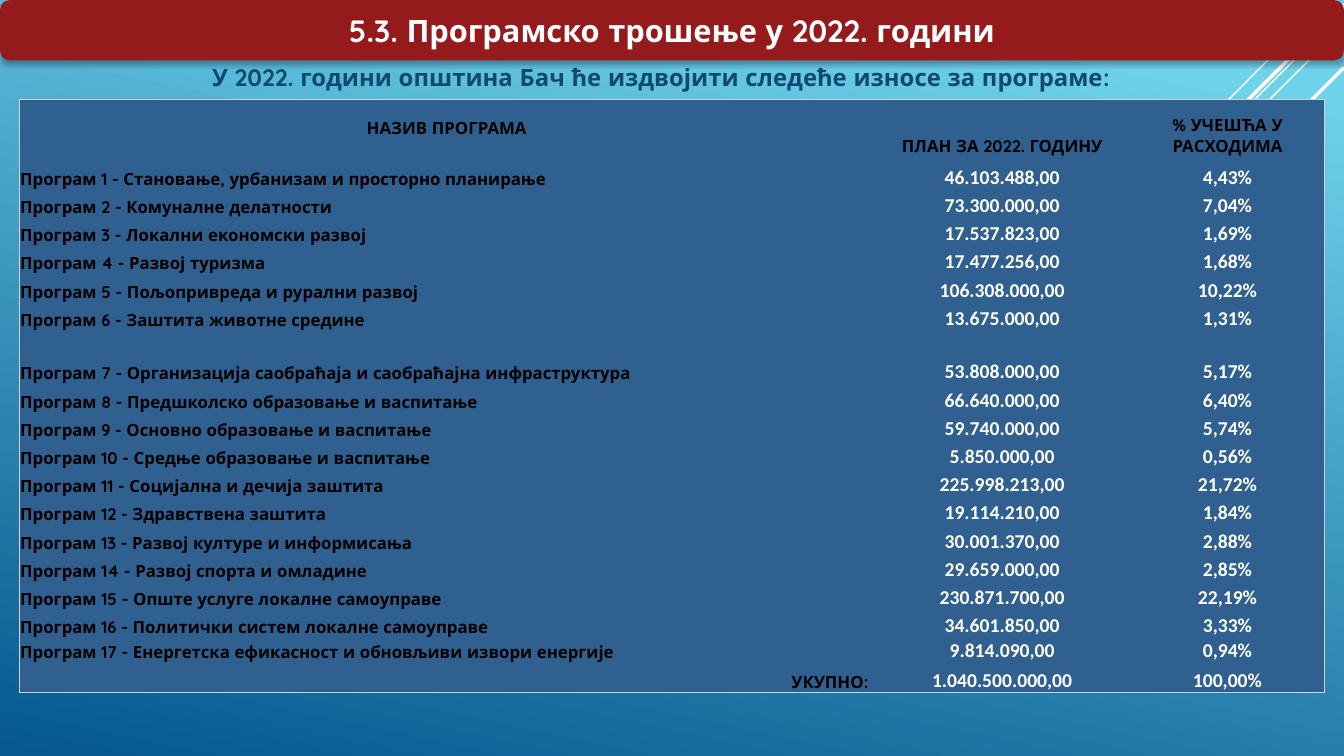
from lxml import etree
from pptx import Presentation
from pptx import util as u
from pptx.dml import color
from pptx.enum import shapes, text
from pptx.oxml import ns

TITLE = "5.3. Програмско трошење у 2022. години"
SUBTITLE = "У 2022. години општина Бач ће издвојити следеће износе за програме:"
HEADER = ("НАЗИВ ПРОГРАМА", "ПЛАН ЗА 2022. ГОДИНУ", "% УЧЕШЋА У РАСХОДИМА")
PROGRAMS = [
    ("Становање, урбанизам и просторно планирање", "46.103.488,00", "4,43%"),
    ("Комуналне делатности", "73.300.000,00", "7,04%"),
    ("Локални економски развој", "17.537.823,00", "1,69%"),
    ("Развој туризма", "17.477.256,00", "1,68%"),
    ("Пољопривреда и рурални развој", "106.308.000,00", "10,22%"),
    ("Заштита животне средине", "13.675.000,00", "1,31%"),
    ("Организација саобраћаја и саобраћајна инфраструктура", "53.808.000,00", "5,17%"),
    ("Предшколско образовање и васпитање", "66.640.000,00", "6,40%"),
    ("Основно образовање и васпитање", "59.740.000,00", "5,74%"),
    ("Средње образовање и васпитање", "5.850.000,00", "0,56%"),
    ("Социјална и дечија заштита", "225.998.213,00", "21,72%"),
    ("Здравствена заштита", "19.114.210,00", "1,84%"),
    ("Развој културе и информисања", "30.001.370,00", "2,88%"),
    ("Развој спорта и омладине", "29.659.000,00", "2,85%"),
    ("Опште услуге локалне самоуправе", "230.871.700,00", "22,19%"),
    ("Политички систем локалне самоуправе", "34.601.850,00", "3,33%"),
    ("Енергетска ефикасност и обновљиви извори енергије", "9.814.090,00", "0,94%"),
]
TOTAL = ("УКУПНО: ", "1.040.500.000,00", "100,00%")
COLUMNS = (8.48, 2.54, 1.93)
ROW_HEIGHT = 0.28
SPECIAL_HEIGHTS = {0: 0.56, 1: 0.33, 7: 0.53, 17: 0.25, 18: 0.29}
RAYS = [
    (13.16, 0.01, 9, 4.18, 1),
    (13.33, 0.1, 6.68, 6.75, 1),
    (13.33, 0.25, 7.91, 5.67, 1),
    (13.33, 0.04, 8.02, 5.34, 2.5),
    (13.33, 0.67, 8.58, 5.42, 2.5),
]


def rgb(value):
    return color.RGBColor.from_string(value)


def add_xml(parent, tag, **attrs):
    return etree.SubElement(parent, ns.qn(tag), {k: str(v) for k, v in attrs.items()})


class Deck:
    heading = {"name": "Quicksand", "size": u.Pt(22), "bold": True}
    subheading = {"name": "Quicksand", "size": u.Pt(17), "bold": True}
    label = {"name": "Quicksand", "size": u.Pt(12), "bold": True}
    number = {"name": "Calibri", "size": u.Pt(14), "bold": True}
    white, black, navy = "FFFFFF", "000000", "0F496F"
    red, table_fill, border = "941A1B", "2F6090", "CFD1D5"

    def __init__(self):
        self.prs = Presentation()
        self.prs.slide_width = u.Inches(13.33)
        self.prs.slide_height = u.Inches(7.5)
        self.s = self.prs.slides.add_slide(self.prs.slide_layouts[0])

    def background(self, stops, angle):
        fill = self.s.background.fill
        fill.gradient()
        fill.gradient_angle = 360 - angle
        for stop, (position, value) in zip(fill.gradient_stops, stops):
            stop.position = position
            stop.color.rgb = rgb(value)

    def add_text(self, tf, content, style, value, align):
        p = tf.paragraphs[0]
        p.alignment = align
        r = p.add_run()
        r.text = content
        for name, setting in style.items():
            setattr(r.font, name, setting)
        r.font.color.rgb = rgb(value)
        return p

    def ray(self, x1, y1, x2, y2, width):
        sp = self.s.shapes.add_connector(
            shapes.MSO_CONNECTOR.STRAIGHT, *map(u.Inches, (x1, y1, x2, y2)))
        sp.line.color.rgb = rgb(self.white)
        sp.line.width = u.Pt(width)
        add_xml(sp._element.spPr, "a:effectLst")

    def bar(self, *box):
        sp = self.s.shapes.add_shape(
            shapes.MSO_SHAPE.ROUNDED_RECTANGLE, *map(u.Inches, box))
        sp.fill.solid()
        sp.fill.fore_color.rgb = rgb(self.red)
        sp.line.fill.background()
        effects = add_xml(sp._element.spPr, "a:effectLst")
        shadow = add_xml(effects, "a:outerShdw", blurRad=u.Pt(3.5), dist=u.Pt(2.2),
                         dir=5400000, algn="ctr", rotWithShape=0)
        add_xml(add_xml(shadow, "a:srgbClr", val=self.black), "a:alpha", val=32000)

    def placeholder(self, sp, box, content, style, value, anchor):
        self.s.shapes._spTree.append(sp._element)
        sp.left, sp.top, sp.width, sp.height = map(u.Inches, box)
        tf = sp.text_frame
        tf.word_wrap = True
        tf.auto_size = text.MSO_AUTO_SIZE.NONE
        tf.vertical_anchor = anchor
        return self.add_text(tf, content, style, value, text.PP_ALIGN.CENTER)

    def cell_borders(self, cell, visible):
        tcPr = cell._tc.get_or_add_tcPr()
        for side in "LRTB":
            ln = add_xml(tcPr, f"a:ln{side}", w=u.Pt(0.75))
            if side in visible:
                fill = add_xml(ln, "a:solidFill")
                add_xml(add_xml(fill, "a:srgbClr", val=self.border), "a:alpha", val=60000)
            else:
                add_xml(ln, "a:noFill")

    def table(self, left, top, rows, columns, heights):
        box = (left, top, sum(columns), sum(heights))
        table = self.s.shapes.add_table(
            len(rows), len(columns), *map(u.Inches, box)).table
        table.first_row = table.horz_banding = False
        for column, width in zip(table.columns, columns):
            column.width = u.Inches(width)
        last_row, last_col = len(rows) - 1, len(columns) - 1
        for i, row in enumerate(rows):
            table.rows[i].height = u.Inches(heights[i])
            for j, content in enumerate(row):
                cell = table.cell(i, j)
                edges = {"L": j == 0, "R": j == last_col, "T": i == 0, "B": i == last_row}
                self.cell_borders(cell, [side for side, on in edges.items() if on])
                cell.fill.solid()
                cell.fill.fore_color.rgb = rgb(self.table_fill)
                cell.margin_left = cell.margin_right = cell.margin_top = u.Inches(0.01)
                cell.margin_bottom = 0
                cell.vertical_anchor = (text.MSO_ANCHOR.MIDDLE if i == j == 0
                                        else text.MSO_ANCHOR.BOTTOM)
                align = text.PP_ALIGN.CENTER
                if j == 0 and i > 0:
                    align = text.PP_ALIGN.RIGHT if i == last_row else text.PP_ALIGN.LEFT
                is_label = i == 0 or j == 0
                self.add_text(cell.text_frame, content,
                              self.label if is_label else self.number,
                              self.black if is_label else self.white, align)


def main():
    deck = Deck()
    title, subtitle = deck.s.placeholders
    deck.background([(0.1, "6ED2EB"), (1, "06588E")], 102)
    for ray in RAYS:
        deck.ray(*ray)
    p = deck.placeholder(subtitle, (1.68, 0.6, 9.75, 0.55), SUBTITLE,
                         deck.subheading, deck.navy, text.MSO_ANCHOR.TOP)
    p.space_before, p.space_after, p.line_spacing = 0, u.Pt(6), 0.9
    bar_box = (0, 0, 13.33, 0.6)
    deck.bar(*bar_box)
    deck.placeholder(title, bar_box, TITLE, deck.heading, deck.white,
                     text.MSO_ANCHOR.MIDDLE)
    programs = [(f"Програм {n} - {name}", plan, share)
                for n, (name, plan, share) in enumerate(PROGRAMS, 1)]
    rows = [HEADER, *programs, TOTAL]
    heights = [SPECIAL_HEIGHTS.get(i, ROW_HEIGHT) for i in range(len(rows))]
    deck.table(0.19, 0.99, rows, COLUMNS, heights)
    deck.prs.save("out.pptx")


if __name__ == "__main__":
    main()
